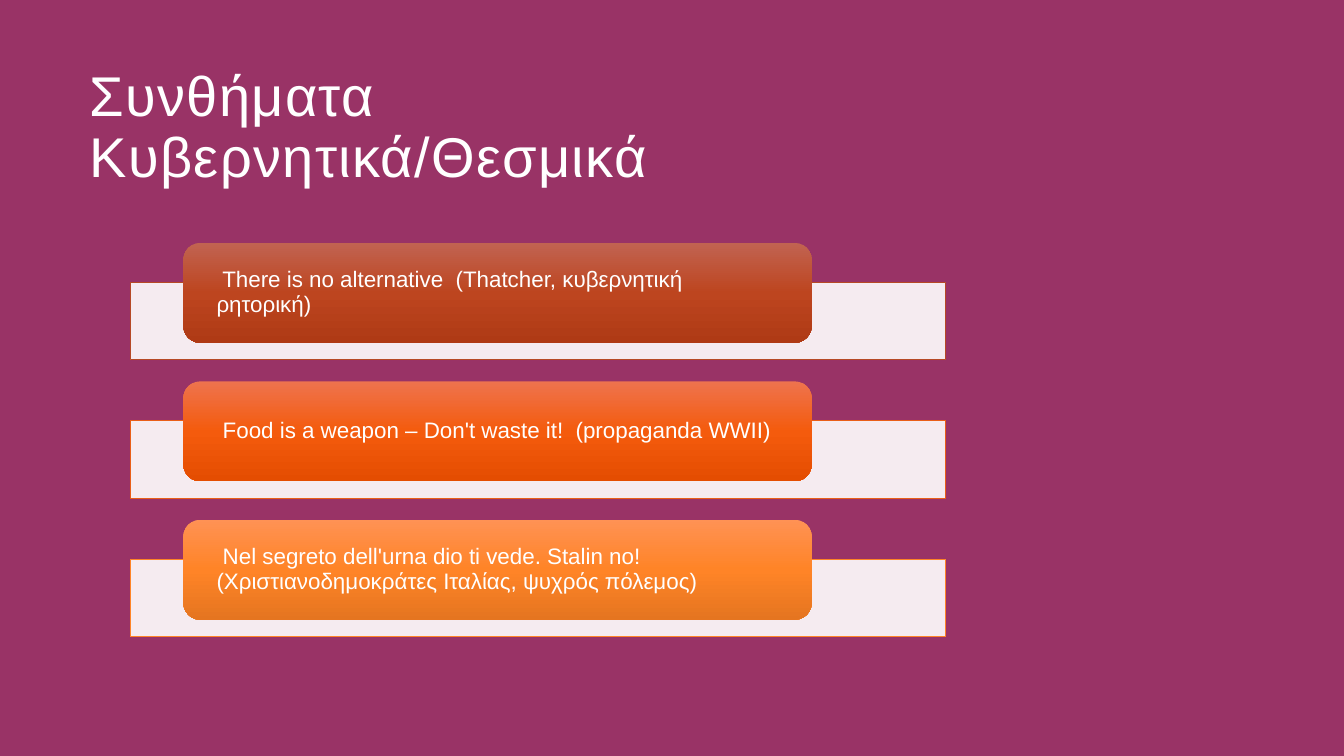
from copy import deepcopy

from pptx import Presentation
from pptx.dml.color import RGBColor
from pptx.enum.shapes import MSO_SHAPE as Preset
from pptx.enum.text import MSO_ANCHOR as Anchor, PP_ALIGN as Align
from pptx.oxml.ns import qn
from pptx.util import Inches, Pt

BACKGROUND = "993366"
WHITE = "FFFFFF"
FONT = "Arial"
SLOGANS = [
    (" There is no alternative  (Thatcher, κυβερνητική ρητορική)",
     "B64926", ("C16351", "BD451F", "AF3A15")),
    (" Food is a weapon – Don't waste it!  (propaganda WWII)",
     "E95E18", ("EE734E", "F45B0D", "E44D01")),
    (" Nel segreto dell'urna dio ti vede. Stalin no!  "
     "(Χριστιανοδημοκράτες Ιταλίας, ψυχρός πόλεμος)",
     "FF8427", ("FF9254", "FF8427", "E57520")),
]


def rgb(value):
    return RGBColor.from_string(value)


def write(frame, text, size, side_inset=0):
    frame.word_wrap = True
    frame.margin_left = frame.margin_right = Inches(side_inset)
    frame.margin_top = frame.margin_bottom = 0
    paragraph = frame.paragraphs[0]
    paragraph.text = text
    paragraph.alignment = Align.LEFT
    paragraph.line_spacing = 0.9
    paragraph.font.size = Pt(size)
    paragraph.font.name = FONT
    paragraph.font.color.rgb = rgb(WHITE)
    return paragraph


def add_preset(slide, preset, left, top, width, height):
    shape = slide.shapes.add_shape(
        preset, Inches(left), Inches(top), Inches(width), Inches(height))
    shape.shadow.inherit = False
    return shape


def fill_gradient(shape, colours):
    shape.fill.gradient()
    shape.fill.gradient_angle = 270
    stop_list = next(shape.element.iter(qn("a:gsLst")))
    stop_list.insert(1, deepcopy(stop_list[0]))
    for stop, position, colour in zip(shape.fill.gradient_stops, (0, 0.5, 1), colours):
        stop.position = position
        stop.color.rgb = rgb(colour)


def add_title(slide, left, top, width, height):
    title = slide.shapes.add_textbox(
        Inches(left), Inches(top), Inches(width), Inches(height))
    heading = write(title.text_frame, "Συνθήματα \vΚυβερνητικά/Θεσμικά", 40)
    for run in heading.runs:
        run.font._element.set("spc", "100")


def add_slogan(slide, left, top, width, text, outline, gradient):
    band = add_preset(slide, Preset.RECTANGLE, left, top + 0.39, width, 0.77)
    band.fill.solid()
    band.fill.fore_color.rgb = rgb(WHITE)
    tint = next(band.element.spPr.iter(qn("a:srgbClr")))
    tint.makeelement(qn("a:alpha"), {"val": "90000"})
    tint.append(tint.makeelement(qn("a:alpha"), {"val": "90000"}))
    band.line.color.rgb = rgb(outline)
    band.line.width = Pt(0.5)

    label = add_preset(slide, Preset.ROUNDED_RECTANGLE, left + 0.53, top, 6.23, 0.99)
    fill_gradient(label, gradient)
    label.line.fill.background()
    label.text_frame.vertical_anchor = Anchor.MIDDLE
    write(label.text_frame, text, 16, 0.28)


def add_slogan_list(slide, left, top, width, height):
    pitch = height / len(SLOGANS)
    for row, slogan in enumerate(SLOGANS):
        add_slogan(slide, left, top + row * pitch, width, *slogan)


def main():
    deck = Presentation()
    deck.slide_width = Inches(13.33)
    deck.slide_height = Inches(7.5)
    slide = deck.slides.add_slide(deck.slide_layouts[6])
    slide.background.fill.solid()
    slide.background.fill.fore_color.rgb = rgb(BACKGROUND)
    add_title(slide, 0.89, 0.68, 7.99, 0.73)
    add_slogan_list(slide, 1.29, 2.41, 8.09, 4.12)
    deck.save("out.pptx")


if __name__ == "__main__":
    main()
